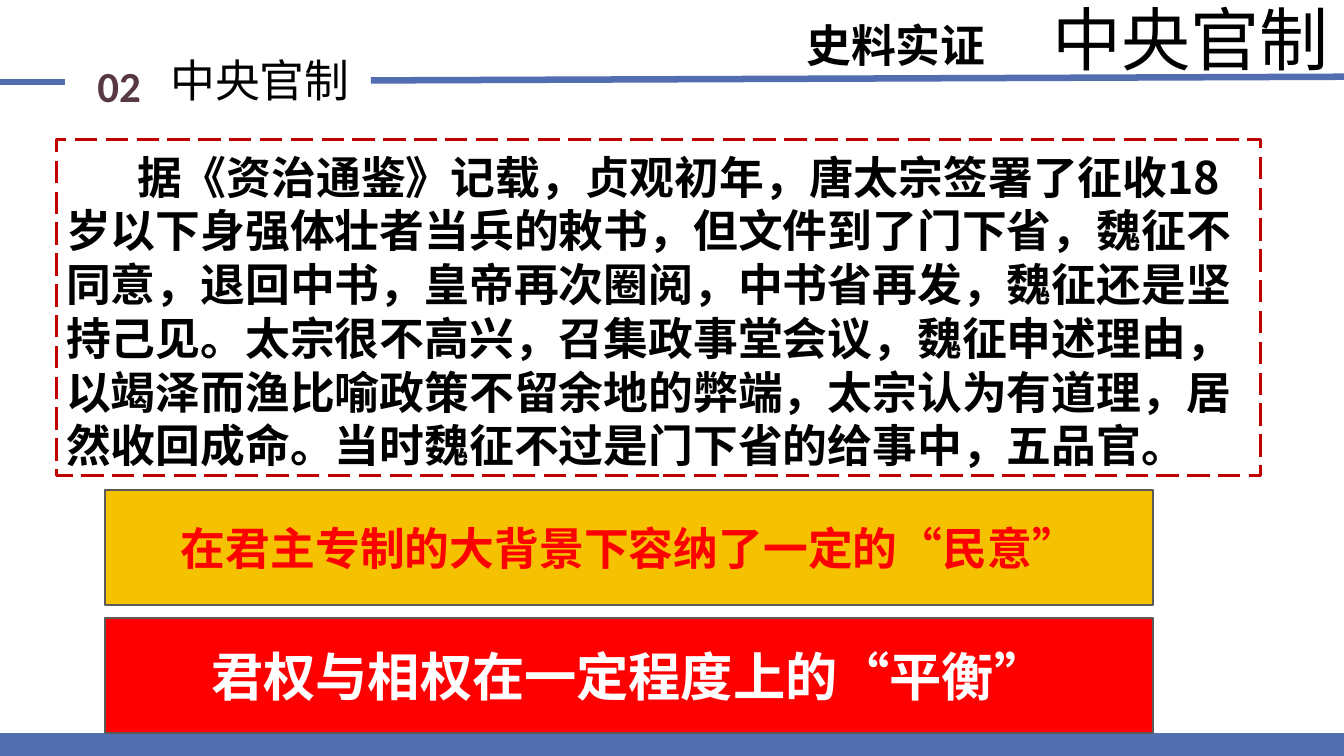
from dataclasses import dataclass

from lxml import etree
from pptx import Presentation, util as u
from pptx.dml.color import RGBColor
from pptx.enum import dml, shapes, text
from pptx.oxml.ns import qn


@dataclass(frozen=True)
class Theme:
    blue: str = "526DB0"
    plum: str = "573843"
    dark: str = "C00000"
    gold: str = "F5C201"
    red: str = "FF0000"
    gray: str = "5A5A5A"
    black: str = "000000"
    white: str = "FFFFFF"
    sans: str = "Noto Sans CJK SC"
    alt: str = "Noto Sans CJK JP"
    latin: str = "Calibri"
    huge: int = 37
    large: int = 28
    base: int = 24
    small: int = 23


T = Theme()
MID = text.MSO_ANCHOR.MIDDLE
LEFT, CENTER = text.PP_ALIGN.LEFT, text.PP_ALIGN.CENTER


def write(shape, words, size=T.base, color=T.black, font=T.sans, bold=False,
          align=LEFT, anchor=MID, wrap=True, pad=0.2, top=0, pitch=None, indent=0):
    """Put one formatted paragraph into a shape."""
    frame = shape.text_frame
    frame.auto_size = text.MSO_AUTO_SIZE.NONE
    frame.word_wrap = wrap
    frame.vertical_anchor = anchor
    frame.margin_left = frame.margin_right = u.Cm(pad)
    frame.margin_top, frame.margin_bottom = u.Cm(top), 0
    para = frame.paragraphs[0]
    props = para._p.get_or_add_pPr()
    props.set("marL", "0")
    props.set("indent", str(u.Cm(indent)))
    etree.SubElement(props, qn("a:buNone"))
    para.alignment = align
    para.space_before = u.Pt(0)
    if pitch:
        para.line_spacing = u.Pt(pitch)
    run = para.add_run()
    run.text = words
    run.font.size, run.font.bold, run.font.name = u.Pt(size), bold, font
    run.font.color.rgb = RGBColor.from_string(color)
    east = etree.SubElement(run._r.get_or_add_rPr(), qn("a:ea"))
    east.set("typeface", font)


class Deck:
    def __init__(self, theme):
        self.theme = theme
        self.prs = Presentation()
        self.prs.slide_width, self.prs.slide_height = u.Cm(25.4), u.Cm(14.29)
        self.slide = self.prs.slides.add_slide(self.prs.slide_layouts[1])

    def rule(self, x1, y1, x2, y2, width):
        line = self.slide.shapes.add_connector(
            shapes.MSO_CONNECTOR.STRAIGHT, *map(u.Cm, (x1, y1, x2, y2)))
        line.line.width = u.Pt(width)
        line.line.color.rgb = RGBColor.from_string(self.theme.blue)
        etree.SubElement(line._element.spPr, qn("a:effectLst"))

    def label(self, words, box, **style):
        write(self.slide.shapes.add_textbox(*map(u.Cm, box)), words, **style)

    def holder(self, shape, words, box, **style):
        shape.left, shape.top, shape.width, shape.height = map(u.Cm, box)
        write(shape, words, **style)

    def paint(self, shape, fill, edge, width):
        shape.fill.solid()
        shape.fill.fore_color.rgb = RGBColor.from_string(fill)
        shape.line.color.rgb = RGBColor.from_string(edge)
        shape.line.width = u.Pt(width)

    def bar(self, words, box, fill, **style):
        shape = self.slide.shapes.add_shape(
            shapes.MSO_SHAPE.RECTANGLE, *map(u.Cm, box))
        shape.shadow.inherit = False
        self.paint(shape, fill, self.theme.gray, 1)
        write(shape, words, bold=True, align=CENTER, **style)


def main():
    deck = Deck(T)
    title, body = deck.slide.placeholders

    # Header rules and bottom band
    deck.rule(7.01, 1.52, 25.4, 1.45, 3.5)
    deck.rule(0, 1.55, 1.22, 1.55, 3.5)
    deck.rule(0, 14.12, 25.4, 14.12, 15)

    # Header labels
    deck.label("中央官制", (19.69, -0.18, 5.71, 1.8), size=T.huge, font=T.alt, wrap=False)
    deck.label("02", (1.57, 1, 1.37, 1.24), size=T.small, font=T.latin,
               color=T.plum, bold=True, align=CENTER, wrap=False)
    deck.label("史料实证", (14.99, 0.2, 4.57, 1.27), font=T.alt, bold=True,
               wrap=False, pad=0.25)
    deck.holder(title, "中央官制", (3.02, 0.89, 4.14, 1.24), wrap=False)

    # Source passage
    deck.paint(body, T.white, T.dark, 1.5)
    body.line.dash_style = dml.MSO_LINE.LONG_DASH
    deck.holder(
        body,
        "据《资治通鉴》记载，贞观初年，唐太宗签署了征收18岁以下身强体壮者当兵的敕书，"
        "但文件到了门下省，魏征不同意，退回中书，皇帝再次圈阅，中书省再发，魏征还是坚持己见。"
        "太宗很不高兴，召集政事堂会议，魏征申述理由，以竭泽而渔比喻政策不留余地的弊端，"
        "太宗认为有道理，居然收回成命。当时魏征不过是门下省的给事中，五品官。",
        (1.07, 2.64, 22.76, 6.35), bold=True, anchor=text.MSO_ANCHOR.TOP,
        pad=0.18, top=0.18, pitch=28.8, indent=1.34)

    # Conclusions
    bars = [
        ("在君主专制的大背景下容纳了一定的“民意”", T.gold, T.red, T.base),
        ("君权与相权在一定程度上的“平衡”", T.red, T.white, T.large),
    ]
    for i, (words, fill, color, size) in enumerate(bars):
        deck.bar(words, (1.98, 9.27 + 2.42 * i, 19.81, 2.16), fill, color=color, size=size)

    deck.prs.save("out.pptx")


if __name__ == "__main__":
    main()
